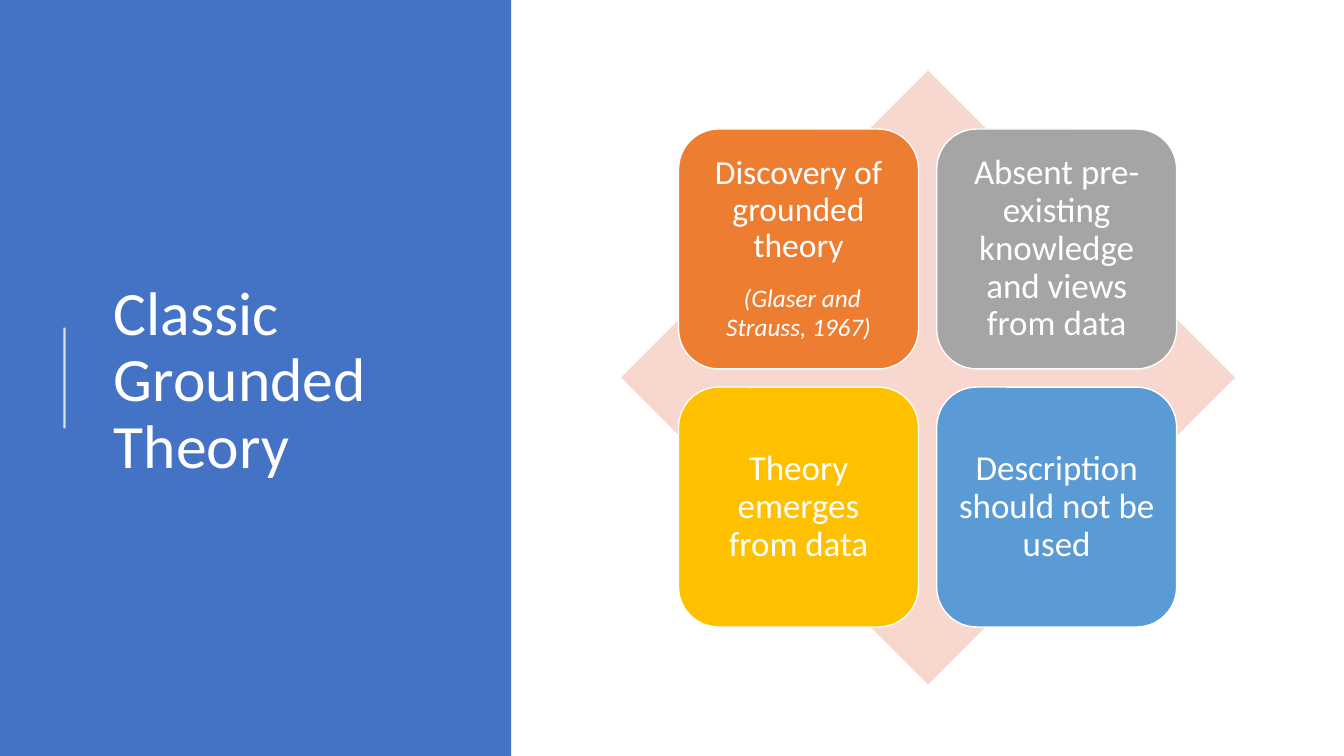
from dataclasses import dataclass

from lxml.etree import SubElement
from pptx import Presentation
from pptx.dml.color import RGBColor
from pptx.enum.shapes import MSO_CONNECTOR, MSO_SHAPE
from pptx.enum.text import MSO_ANCHOR, MSO_AUTO_SIZE, PP_ALIGN
from pptx.oxml.ns import qn
from pptx.util import Inches, Pt


@dataclass(frozen=True)
class Theme:
    font: str = "Calibri"
    white: str = "FFFFFF"
    blue: str = "4472C4"
    blush: str = "F8D7CE"
    orange: str = "ED7D31"
    gray: str = "A5A5A5"
    gold: str = "FFC000"
    sky: str = "5B9BD5"
    title: int = 44
    card: int = 25
    lead: int = 24
    cite: int = 18


THEME = Theme()
CARDS = [
    (THEME.orange, [
        [("Discovery of grounded theory", THEME.lead, False)],
        [(" ", THEME.lead, False), ("(Glaser and Strauss, 1967)", THEME.cite, True)],
    ]),
    (THEME.gray, [[("Absent pre-existing knowledge and views from data", THEME.card, False)]]),
    (THEME.gold, [[("Theory emerges from data", THEME.card, False)]]),
    (THEME.sky, [[("Description should not be used", THEME.card, False)]]),
]


def color(value):
    return RGBColor.from_string(value)


def add_run(para, text, size, slant=False):
    run = para.add_run()
    run.text = text
    run.font.name = THEME.font
    run.font.size = Pt(size)
    run.font.italic = slant
    run.font.color.rgb = color(THEME.white)


def add_block(shapes, kind, left, top, width, height, fill):
    block = shapes.add_shape(kind, Inches(left), Inches(top), Inches(width), Inches(height))
    block.shadow.inherit = False
    block.fill.solid()
    block.fill.fore_color.rgb = color(fill)
    block.line.fill.background()
    return block


def add_card(shapes, left, top, side, fill, paras):
    card = add_block(shapes, MSO_SHAPE.ROUNDED_RECTANGLE, left, top, side, side, fill)
    card.line.color.rgb = color(THEME.white)
    card.line.width = Pt(1)
    frame = card.text_frame
    frame.word_wrap = True
    frame.vertical_anchor = MSO_ANCHOR.MIDDLE
    frame.margin_left = frame.margin_right = Inches(0.1)
    frame.margin_top = frame.margin_bottom = Inches(0.1)
    for index, runs in enumerate(paras):
        para = frame.add_paragraph() if index else frame.paragraphs[0]
        para.alignment = PP_ALIGN.CENTER
        para.line_spacing = 0.9
        para.space_after = Pt(10)
        for run in runs:
            add_run(para, *run)


def add_title(slide, text):
    title = slide.shapes.title
    title.left, title.top = Inches(1.03), Inches(0.78)
    title.width, title.height = Inches(3.69), Inches(6.02)
    frame = title.text_frame
    frame.word_wrap = True
    frame.auto_size = MSO_AUTO_SIZE.NONE
    frame.vertical_anchor = MSO_ANCHOR.MIDDLE
    para = frame.paragraphs[0]
    para.alignment = PP_ALIGN.LEFT
    para.line_spacing = 0.9
    add_run(para, text, THEME.title)
    return title


def add_rule(shapes, left, start, end):
    rule = shapes.add_connector(
        MSO_CONNECTOR.STRAIGHT, Inches(left), Inches(start), Inches(left), Inches(end))
    rule.line.color.rgb = color(THEME.white)
    rule.line.width = Pt(1.5)
    props = rule._element.spPr
    tint = next(props.iter(qn("a:srgbClr")))
    SubElement(tint, qn("a:alpha"), val="80000")
    SubElement(props, qn("a:effectLst"))


def add_matrix(slide):
    shapes = slide.shapes.add_group_shape().shapes
    add_block(shapes, MSO_SHAPE.DIAMOND, 6.16, 0.7, 6.09, 6.09, THEME.blush)
    side, step = 2.38, 2.56
    for index, (fill, paras) in enumerate(CARDS):
        row, col = divmod(index, 2)
        add_card(shapes, 6.73 + col * step, 1.28 + row * step, side, fill, paras)


def main():
    deck = Presentation()
    deck.slide_width, deck.slide_height = Inches(13.33), Inches(7.5)
    slide = deck.slides.add_slide(deck.slide_layouts[5])
    panel = add_block(slide.shapes, MSO_SHAPE.RECTANGLE, 0, 0, 5.07, 7.5, THEME.blue)
    title = add_title(slide, "Classic Grounded Theory")
    title._element.addprevious(panel._element)
    add_rule(slide.shapes, 0.64, 4.25, 3.25)
    add_matrix(slide)
    deck.save("out.pptx")


if __name__ == "__main__":
    main()
